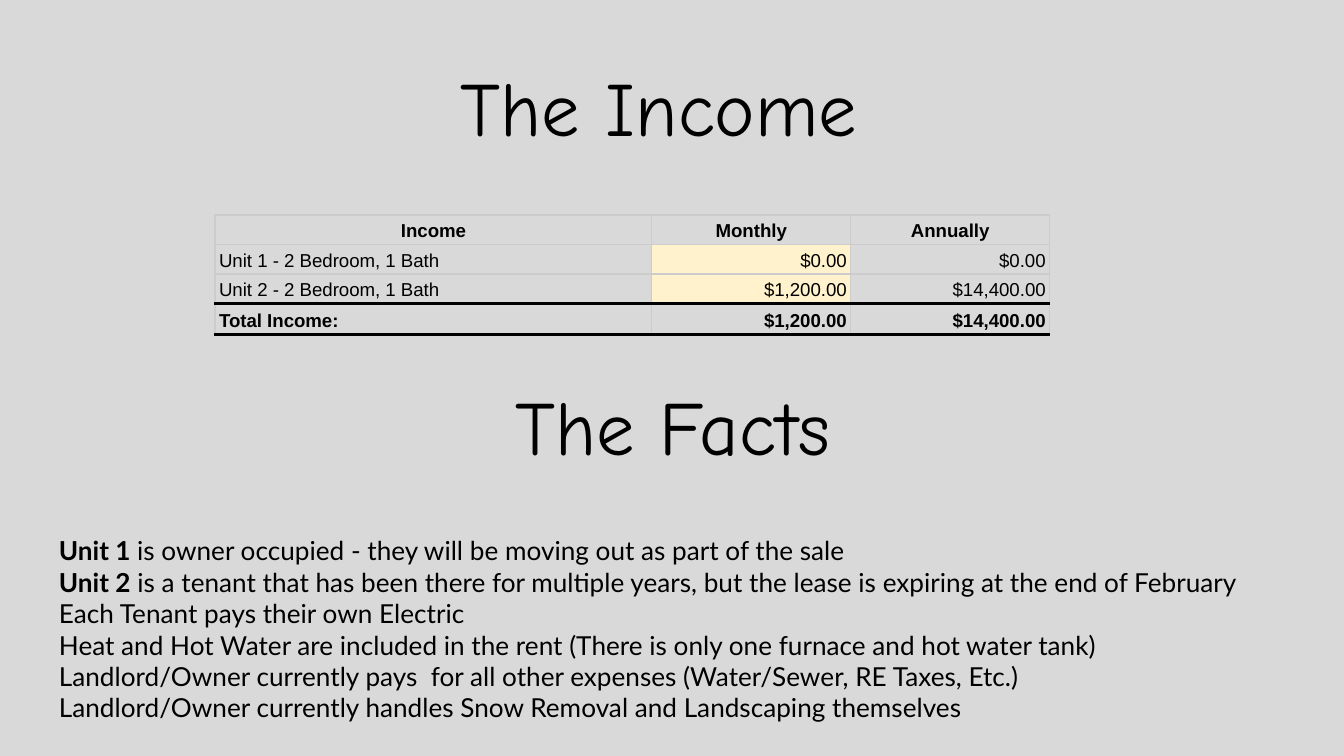
from pptx import Presentation
from pptx.dml.color import RGBColor
from pptx.enum.text import MSO_ANCHOR, MSO_AUTO_SIZE, PP_ALIGN
from pptx.oxml import parse_xml
from pptx.oxml.ns import nsdecls
from pptx.util import Inches, Pt

theme = {
    "back": RGBColor.from_string("D9D9D9"),
    "ink": RGBColor.from_string("000000"),
    "input": RGBColor.from_string("FFF2CC"),
    "grid": ("CCCCCC", 0.75),
    "rule": ("000000", 2.25),
    "head": ("Comic Neue", 41),
    "body": ("Lato", 14),
    "cell": ("Arial", 10),
}


def write(par, text, style, bold=False):
    run = par.add_run()
    run.text = text
    name, size = theme[style]
    for key, val in {"name": name, "size": Pt(size), "bold": bold}.items():
        setattr(run.font, key, val)
    run.font.color.rgb = theme["ink"]


def frame(shape, left, top, width, height, inset=0.1):
    box = {"left": left, "top": top, "width": width, "height": height}
    for key, val in box.items():
        setattr(shape, key, Inches(val))
    text = shape.text_frame
    form = {
        "word_wrap": True,
        "auto_size": MSO_AUTO_SIZE.NONE,
        "vertical_anchor": MSO_ANCHOR.TOP,
        "margin_left": Inches(0.1),
        "margin_right": Inches(0.1),
        "margin_top": Inches(inset),
        "margin_bottom": Inches(0.1),
    }
    for key, val in form.items():
        setattr(text, key, val)
    return text


# Slide, 16:9
deck = Presentation()
deck.slide_width, deck.slide_height = Inches(10), Inches(10 * 9 / 16)
slide = deck.slides.add_slide(deck.slide_layouts[5])
slide.background.fill.solid()
slide.background.fill.fore_color.rgb = theme["back"]

# Headings
facts = slide.shapes.add_textbox(0, 0, 0, 0)
heads = [
    (slide.shapes.title, "The Income", 0.97, 0.35),
    (facts, "The Facts", 1.07, 2.72),
]
for shape, words, left, top in heads:
    par = frame(shape, left, top, 7.87, 1.14).paragraphs[0]
    par.alignment = PP_ALIGN.CENTER
    write(par, words, "head")

# Income table
rows = [
    ("Income", "Monthly", "Annually"),
    ("Unit 1 - 2 Bedroom, 1 Bath", "$0.00", "$0.00"),
    ("Unit 2 - 2 Bedroom, 1 Bath", "$1,200.00", "$14,400.00"),
    ("Total Income:", "$1,200.00", "$14,400.00"),
]
widths = [3.25, 1.48, 1.48]
heights = [0.22, 0.22, 0.22, 0.23]
last = len(rows) - 1
table = slide.shapes.add_table(
    len(rows), len(widths), Inches(1.6), Inches(1.6),
    Inches(sum(widths)), Inches(sum(heights))).table
table.first_row = table.horz_banding = False
for col, width in zip(table.columns, widths):
    col.width = Inches(width)
for line, height in zip(table.rows, heights):
    line.height = Inches(height)

form = {
    "vertical_anchor": MSO_ANCHOR.BOTTOM,
    "margin_left": Inches(0.03),
    "margin_right": Inches(0.03),
    "margin_top": Inches(0.02),
    "margin_bottom": Inches(0.02),
}
for r, row in enumerate(rows):
    for c, words in enumerate(row):
        cell = table.cell(r, c)
        for key, val in form.items():
            setattr(cell, key, val)
        par = cell.text_frame.paragraphs[0]
        par.line_spacing = 1.15
        if r == 0:
            par.alignment = PP_ALIGN.CENTER
        else:
            par.alignment = PP_ALIGN.RIGHT if c else PP_ALIGN.LEFT
        write(par, words, "cell", r in (0, last))

        # Borders: heavy rules above and below the total
        heavy = {"T": r == last, "B": r >= last - 1}
        for side in "LRTB":
            color, size = theme["rule" if heavy.get(side) else "grid"]
            cell._tc.get_or_add_tcPr().append(parse_xml(
                f'<a:ln{side} {nsdecls("a")} w="{Pt(size)}"><a:solidFill>'
                f'<a:srgbClr val="{color}"/></a:solidFill></a:ln{side}>'))

        # Fill: only the monthly inputs are tinted
        if c == 1 and 0 < r < last:
            cell.fill.solid()
            cell.fill.fore_color.rgb = theme["input"]
        else:
            cell.fill.background()

# Facts list: bold lead, then the rest
lines = [
    ("Unit 1 ", "is owner occupied - they will be moving out as part of the sale"),
    ("Unit 2", " is a tenant that has been there for multiple years, "
               "but the lease is expiring at the end of February"),
    ("", "Each Tenant pays their own Electric"),
    ("", "Heat and Hot Water are included in the rent "
         "(There is only one furnace and hot water tank)"),
    ("", "Landlord/Owner currently pays  for all other expenses "
         "(Water/Sewer, RE Taxes, Etc.)"),
    ("", "Landlord/Owner currently handles Snow Removal and Landscaping themselves"),
]
text = frame(slide.shapes.add_textbox(0, 0, 0, 0), 0.34, 3.65, 9.38, 1.9, 0.33)
for i, (lead, rest) in enumerate(lines):
    par = text.add_paragraph() if i else text.paragraphs[0]
    if lead:
        write(par, lead, "body", True)
    write(par, rest, "body")

deck.save("out.pptx")
